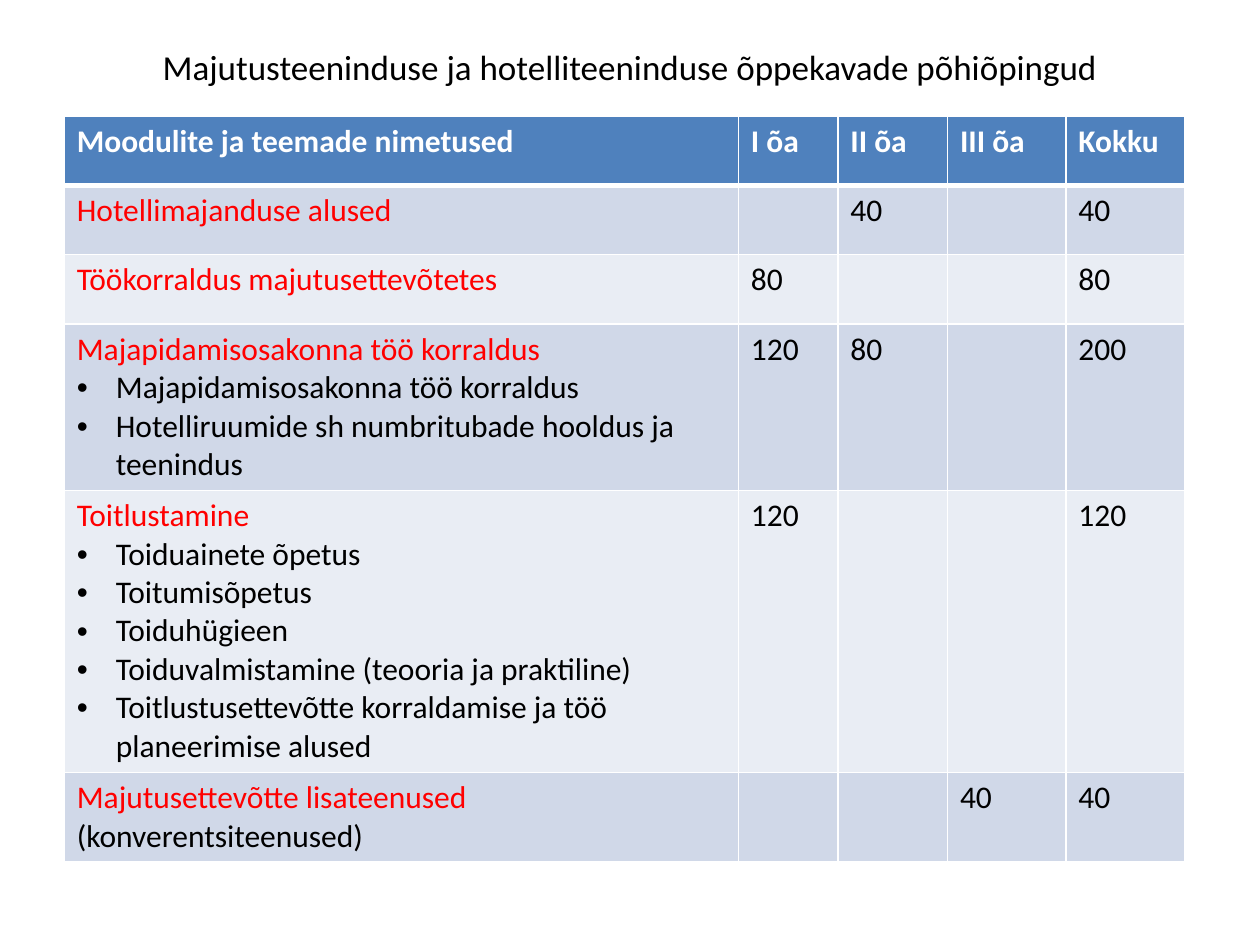
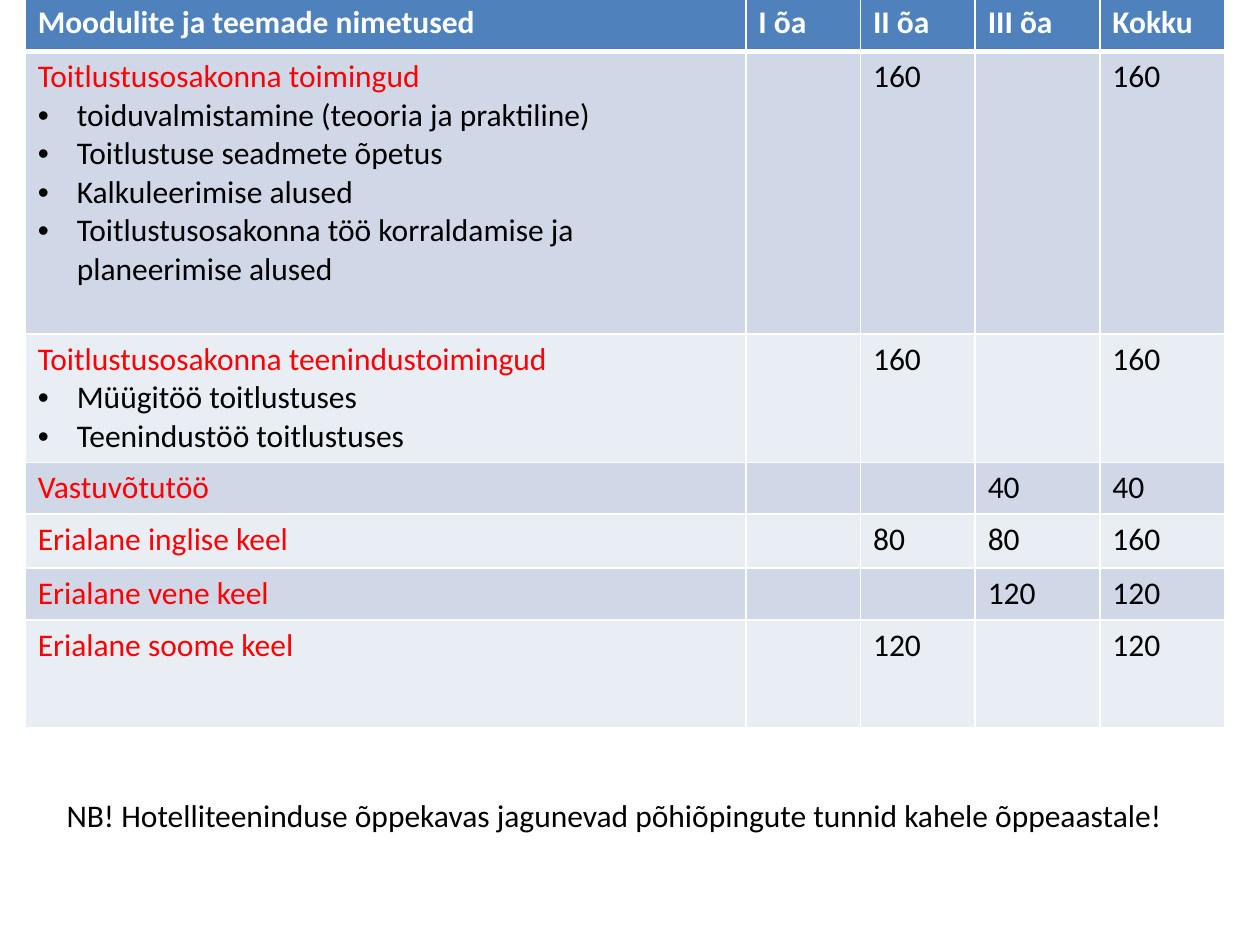
from lxml import etree
from pptx import Presentation
from pptx.dml.color import RGBColor
from pptx.enum.text import MSO_ANCHOR, PP_ALIGN
from pptx.oxml import parse_xml
from pptx.oxml.ns import nsdecls, qn
from pptx.util import Inches, Pt

MID = MSO_ANCHOR.MIDDLE
LEFT = PP_ALIGN.LEFT
CENTER = PP_ALIGN.CENTER
WHITE = RGBColor(0xFF, 0xFF, 0xFF)
BLACK = RGBColor(0, 0, 0)
RED = RGBColor(0xFF, 0, 0)
BLUE = RGBColor(0x4F, 0x81, 0xBD)
BANDS = [RGBColor(0xD0, 0xD8, 0xE8), RGBColor(0xE9, 0xED, 0xF4)]
FONT = "Calibri"
HEAD = ["Moodulite ja teemade nimetused", "I õa", "II õa", "III õa", "Kokku"]


def put(para, text, size=18, color=BLACK, bold=False, align=LEFT, bullet=False):
    run = para.add_run()
    run.text = text
    font = run.font
    font.name, font.size, font.bold = FONT, Pt(size), bold
    font.color.rgb = color
    para.alignment = align
    if bullet:
        props = para._p.get_or_add_pPr()
        props.set("marL", str(Inches(0.31)))
        props.set("indent", str(-Inches(0.31)))
        etree.SubElement(props, qn("a:buFont")).set("typeface", "Arial")
        etree.SubElement(props, qn("a:buChar")).set("char", "•")


def paint(cell, fill, top, base):
    cell.fill.solid()
    cell.fill.fore_color.rgb = fill
    props = cell._tc.get_or_add_tcPr()
    for spot, (side, width) in enumerate(zip("LRTB", (1, 1, top, base))):
        props.insert(spot, parse_xml(
            f'<a:ln{side} {nsdecls("a")} w="{Pt(width)}"><a:solidFill>'
            f'<a:srgbClr val="{WHITE}"/></a:solidFill></a:ln{side}>'))


deck = Presentation()
deck.slide_width, deck.slide_height = Inches(10), Inches(7.5)
first = deck.slides.add_slide(deck.slide_layouts[5])
second = deck.slides.add_slide(deck.slide_layouts[6])

title = first.shapes.title
title.left, title.top = Inches(0.5), Inches(0.3)
title.width, title.height = Inches(9), Inches(0.46)
title.text_frame.vertical_anchor = MID
put(title.text_frame.paragraphs[0],
    "Majutusteeninduse ja hotelliteeninduse õppekavade põhiõpingud",
    size=20, align=CENTER)

basics = [
    ("Hotellimajanduse alused", [], ["", "40", "", "40"]),
    ("Töökorraldus majutusettevõtetes", [], ["80", "", "", "80"]),
    ("Majapidamisosakonna töö korraldus",
     ["Majapidamisosakonna töö korraldus",
      "Hotelliruumide sh numbritubade hooldus ja teenindus"],
     ["120", "80", "", "200"]),
    ("Toitlustamine",
     ["Toiduainete õpetus", "Toitumisõpetus", "Toiduhügieen",
      "Toiduvalmistamine (teooria ja praktiline)",
      "Toitlustusettevõtte korraldamise ja töö planeerimise alused"],
     ["120", "", "", "120"]),
    ("Majutusettevõtte lisateenused (konverentsiteenused)", [],
     ["", "", "40", "40"]),
]
extras = [
    ("Toitlustusosakonna toimingud",
     ["toiduvalmistamine (teooria ja praktiline)",
      "Toitlustuse seadmete õpetus", "Kalkuleerimise alused",
      "Toitlustusosakonna töö korraldamise ja planeerimise alused"],
     ["", "160", "", "160"]),
    ("Toitlustusosakonna teenindustoimingud",
     ["Müügitöö toitlustuses", "Teenindustöö toitlustuses"],
     ["", "160", "", "160"]),
    ("Vastuvõtutöö", [], ["", "", "40", "40"]),
    ("Erialane inglise keel", [], ["", "80", "80", "160"]),
    ("Erialane vene keel", [], ["", "", "120", "120"]),
    ("Erialane soome keel", [], ["", "120", "", "120"]),
]
plans = [
    (first, 0.51, 0.92, [5.35, 0.79, 0.87, 0.94, 0.94],
     [0.55, 0.55, 0.55, 1.32, 2.24, 0.71], basics),
    (second, 0.2, -0.02, [5.72, 0.91, 0.91, 0.99, 0.99],
     [0.43, 2.24, 1.02, 0.41, 0.43, 0.41, 0.86], extras),
]

for slide, left, top, cols, rows, units in plans:
    grid = slide.shapes.add_table(
        len(rows), len(cols), Inches(left), Inches(top),
        Inches(sum(cols)), Inches(sum(rows))).table
    for col, width in zip(grid.columns, cols):
        col.width = Inches(width)
    for row, height in zip(grid.rows, rows):
        row.height = Inches(height)
    for col, label in enumerate(HEAD):
        cell = grid.cell(0, col)
        paint(cell, BLUE, 1, 3)
        put(cell.text_frame.paragraphs[0], label, color=WHITE, bold=True)
    for row, (name, topics, hours) in enumerate(units, 1):
        for col in range(len(cols)):
            paint(grid.cell(row, col), BANDS[(row - 1) % 2], 3 if row == 1 else 1, 1)
        frame = grid.cell(row, 0).text_frame
        lead, mark, rest = name.partition("(")
        put(frame.paragraphs[0], lead, color=RED)
        if mark:
            put(frame.paragraphs[0], mark + rest)
        for topic in topics:
            put(frame.add_paragraph(), topic, bullet=True)
        for col, hour in enumerate(hours, 1):
            if hour:
                put(grid.cell(row, col).text_frame.paragraphs[0], hour)

note = second.shapes.add_textbox(Inches(0.43), Inches(6.27), Inches(9.21), Inches(0.4))
note.text_frame.word_wrap = True
put(note.text_frame.paragraphs[0],
    "NB! Hotelliteeninduse õppekavas jagunevad põhiõpingute tunnid kahele õppeaastale!")

deck.save("out.pptx")
